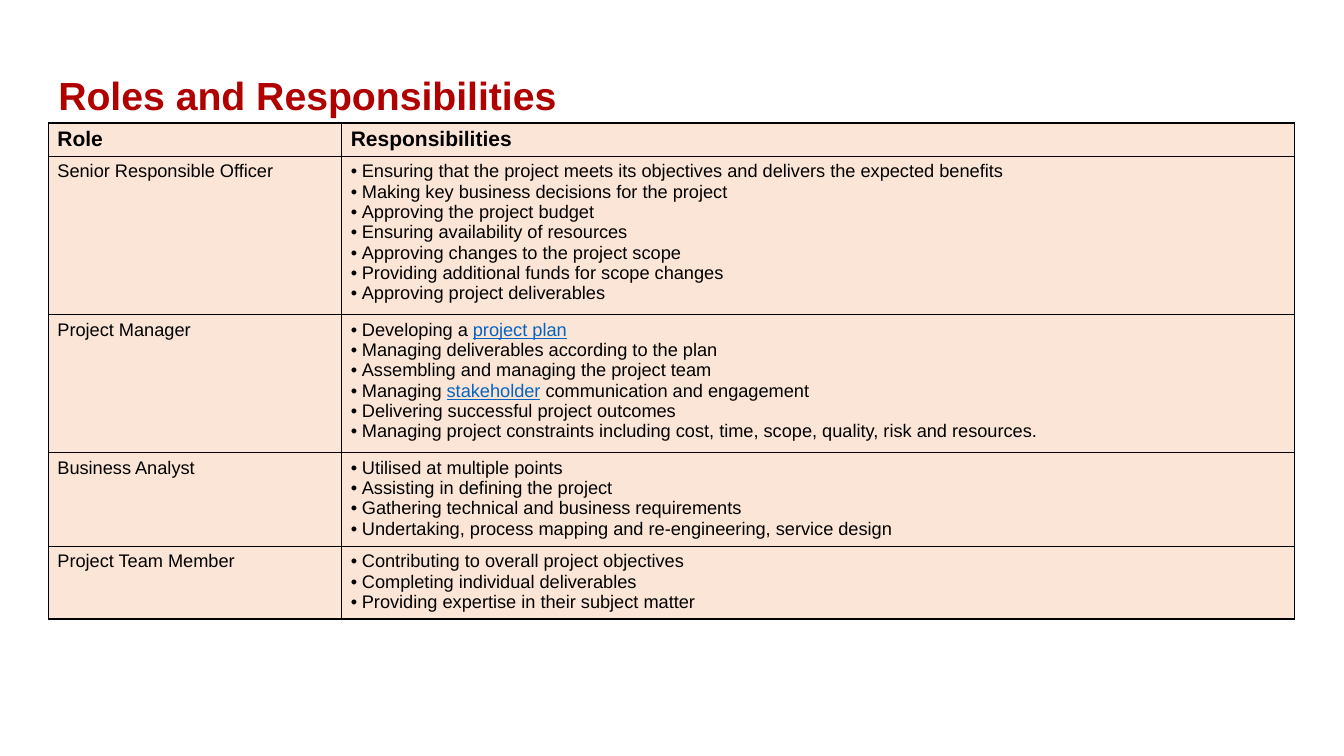
from lxml.etree import SubElement
from pptx import Presentation
from pptx.dml.color import RGBColor as RGB
from pptx.enum.text import MSO_ANCHOR as Anchor
from pptx.oxml.ns import qn
from pptx.util import Inches, Pt

TITLE = "Roles and Responsibilities"
HEADINGS = ("Role", "Responsibilities")
LINKED = ("project plan", "stakeholder")
ROLES = [
    ("Senior Responsible Officer", 1.57, [
        "Ensuring that the project meets its objectives and delivers the expected benefits",
        "Making key business decisions for the project",
        "Approving the project budget",
        "Ensuring availability of resources",
        "Approving changes to the project scope",
        "Providing additional funds for scope changes",
        "Approving project deliverables",
    ]),
    ("Project Manager", 1.37, [
        "Developing a project plan",
        "Managing deliverables according to the plan",
        "Assembling and managing the project team",
        "Managing stakeholder communication and engagement",
        "Delivering successful project outcomes",
        "Managing project constraints including cost, time, scope, quality, risk and resources.",
    ]),
    ("Business Analyst", 0.93, [
        "Utilised at multiple points",
        "Assisting in defining the project",
        "Gathering technical and business requirements",
        "Undertaking, process mapping and re-engineering, service design",
    ]),
    ("Project Team Member", 0.72, [
        "Contributing to overall project objectives",
        "Completing individual deliverables",
        "Providing expertise in their subject matter",
    ]),
]
THEME = {
    "font": "Arial", "title": "B00000", "text": "000000", "link": "0563C1",
    "fill": "FBE5D6", "border": "000000",
    "title_size": 28, "heading_size": 15, "body_size": 13,
}
LEFT, TOP = 0.48, 1.22
COLUMNS = (2.91, 9.45)
HEADING_HEIGHT = 0.33
BULLET_INDENT = 0.11


def split_links(line):
    for phrase in LINKED:
        before, found, after = line.partition(phrase)
        if found:
            return [(before, False), (found, True), (after, False)]
    return [(line, False)]


def write(frame, lines, size="body_size", color="text", bold=False, bullet=False):
    for index, line in enumerate(lines):
        paragraph = frame.paragraphs[0] if index == 0 else frame.add_paragraph()
        if bullet:
            props = paragraph._p.get_or_add_pPr()
            props.set("marL", str(Inches(BULLET_INDENT)))
            props.set("indent", str(-Inches(BULLET_INDENT)))
            SubElement(props, qn("a:buFont"), typeface=THEME["font"])
            SubElement(props, qn("a:buChar"), char="•")
        for words, linked in split_links(line):
            if not words:
                continue
            run = paragraph.add_run()
            run.text = words
            run.font.name = THEME["font"]
            run.font.size = Pt(THEME[size])
            run.font.bold = bold
            run.font.underline = linked
            run.font.color.rgb = RGB.from_string(THEME["link" if linked else color])


def style_cell(cell):
    cell.margin_left = cell.margin_right = Inches(0.09)
    cell.margin_top = cell.margin_bottom = Inches(0.05)
    cell.vertical_anchor = Anchor.TOP
    props = cell._tc.get_or_add_tcPr()
    for side in ("lnL", "lnR", "lnT", "lnB"):
        border = SubElement(props, qn(f"a:{side}"), w=str(Pt(1)))
        SubElement(SubElement(border, qn("a:solidFill")), qn("a:srgbClr"), val=THEME["border"])
    cell.fill.solid()
    cell.fill.fore_color.rgb = RGB.from_string(THEME["fill"])


def add_roles(slide):
    heights = [HEADING_HEIGHT] + [height for _, height, _ in ROLES]
    table = slide.shapes.add_table(
        len(heights), len(COLUMNS), Inches(LEFT), Inches(TOP),
        Inches(sum(COLUMNS)), Inches(sum(heights))).table
    table.horz_banding = False
    for column, width in zip(table.columns, COLUMNS):
        column.width = Inches(width)
    for row, height in zip(table.rows, heights):
        row.height = Inches(height)
    for cell in table.iter_cells():
        style_cell(cell)
    for column, heading in enumerate(HEADINGS):
        write(table.cell(0, column).text_frame, [heading], size="heading_size", bold=True)
    for row, (role, _, duties) in enumerate(ROLES, start=1):
        write(table.cell(row, 0).text_frame, [role])
        write(table.cell(row, 1).text_frame, duties, bullet=True)


def add_title(slide):
    frame = slide.shapes.add_textbox(
        Inches(LEFT), Inches(0.73), Inches(11.84), Inches(0.49)).text_frame
    frame.word_wrap = True
    frame.vertical_anchor = Anchor.BOTTOM
    write(frame, [TITLE], size="title_size", color="title", bold=True)


def main():
    deck = Presentation()
    deck.slide_width, deck.slide_height = Inches(13.33), Inches(7.5)
    slide = deck.slides.add_slide(deck.slide_layouts[6])
    add_roles(slide)
    add_title(slide)
    deck.save("out.pptx")


if __name__ == "__main__":
    main()
